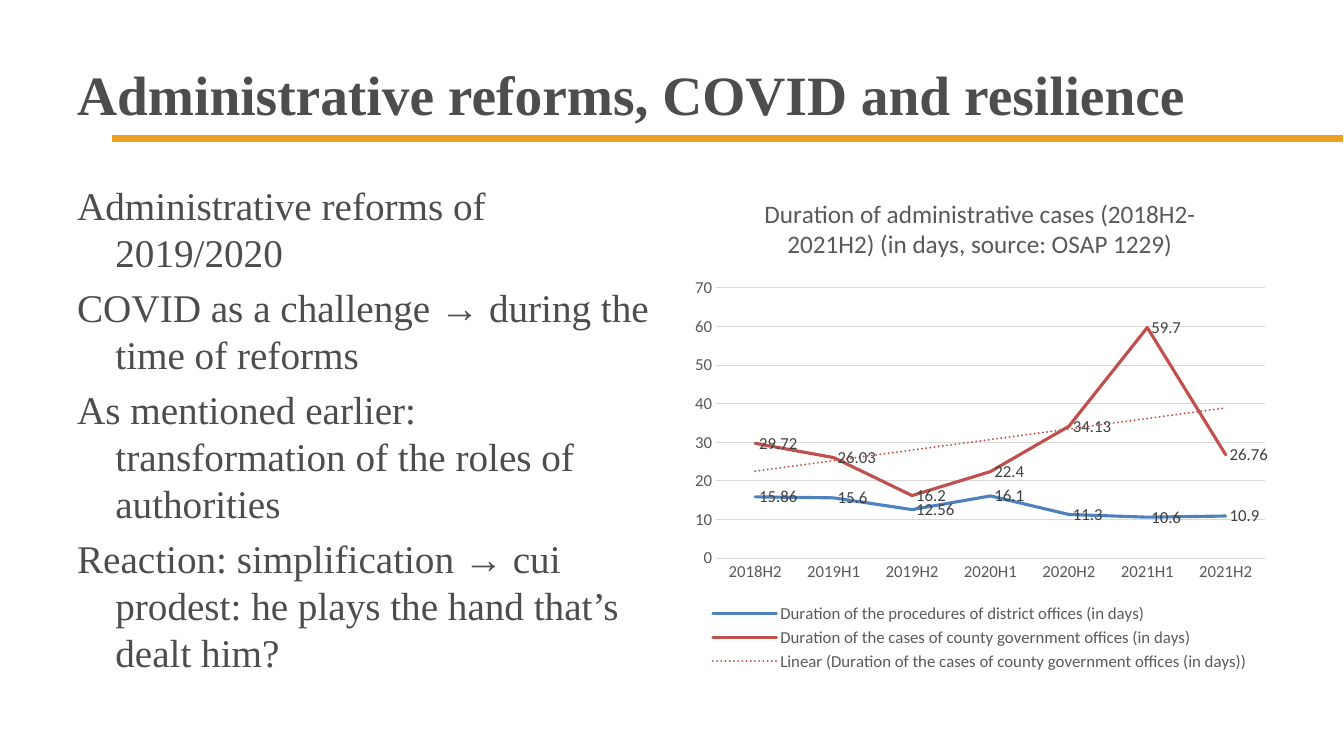
from dataclasses import dataclass

from lxml import etree
from pptx import Presentation
from pptx import util as u
from pptx.chart.data import CategoryChartData
from pptx.dml.color import RGBColor
from pptx.enum import chart as ch
from pptx.enum import shapes, text
from pptx.oxml import parse_xml
from pptx.oxml.ns import nsdecls, qn

SLIDE_WIDTH, SLIDE_HEIGHT = u.Inches(13.333), u.Inches(7.5)


@dataclass(frozen=True)
class Theme:
    serif: str = "Times New Roman"
    sans: str = "Calibri"
    ink: str = "4D4D4D"
    rule: str = "EDA021"
    paper: str = "FFFFFF"
    axis_text: str = "595959"
    label_text: str = "404040"
    grid: str = "D9D9D9"
    title_size: float = 39.6
    body_size: float = 28
    chart_title_size: float = 18
    chart_size: float = 12


@dataclass(frozen=True)
class Area:
    """A rectangle in percent of the slide's width and height."""
    left: float
    top: float
    width: float
    height: float

    def emu(self) -> tuple[int, int, int, int]:
        return (int(SLIDE_WIDTH * self.left / 100), int(SLIDE_HEIGHT * self.top / 100),
                int(SLIDE_WIDTH * self.width / 100), int(SLIDE_HEIGHT * self.height / 100))


@dataclass(frozen=True)
class Series:
    name: str
    color: str
    values: tuple[float, ...]
    trend: bool = False


THEME = Theme()
RULE = Area(8.33, 17.8, 91.67, 1)
TITLE = Area(5, 4, 90, 16.67)
BODY = Area(5, 23.33, 44.17, 66)
CHART = Area(50.83, 23.33, 44.17, 66)

HEADING = "Administrative reforms, COVID and resilience"
POINTS = (
    "Administrative reforms of 2019/2020",
    "COVID as a challenge → during the time of reforms",
    "As mentioned earlier: transformation of the roles of authorities",
    "Reaction: simplification → cui prodest: he plays the hand that’s dealt him?",
)
CHART_TITLE = "Duration of administrative cases (2018H2-2021H2) (in days, source: OSAP 1229)"
HALF_YEARS = ("2018H2", "2019H1", "2019H2", "2020H1", "2020H2", "2021H1", "2021H2")
SERIES = (
    Series("Duration of the procedures of district offices (in days)", "4F81BD",
           (15.86, 15.6, 12.56, 16.1, 11.3, 10.6, 10.9)),
    Series("Duration of the cases of county government offices (in days)", "C0504D",
           (29.72, 26.03, 16.2, 22.4, 34.13, 59.7, 26.76), trend=True),
)


def style_font(font, name: str, size: float, color: str, bold: bool = False) -> None:
    font.name, font.size, font.bold = name, u.Pt(size), bold
    font.color.rgb = RGBColor.from_string(color)


def style_line(line, color: str, width: float) -> None:
    line.color.rgb = RGBColor.from_string(color)
    line.width = u.Pt(width)


def add_rule(page) -> None:
    bar = page.shapes.add_shape(shapes.MSO_SHAPE.RECTANGLE, *RULE.emu())
    bar.shadow.inherit = False
    bar.fill.solid()
    bar.fill.fore_color.rgb = RGBColor.from_string(THEME.rule)
    style_line(bar.line, THEME.paper, 0.75)


def add_text(page, area: Area, lines: tuple[str, ...], size: float,
             bold: bool = False, hanging: float = 0,
             anchor: text.MSO_ANCHOR = text.MSO_ANCHOR.TOP) -> None:
    """Add one paragraph per line, with a hanging indent in inches."""
    frame = page.shapes.add_textbox(*area.emu()).text_frame
    frame.word_wrap = True
    frame.vertical_anchor = anchor
    frame.text = "\n".join(lines)
    for index, para in enumerate(frame.paragraphs):
        if hanging:
            properties = para._p.get_or_add_pPr()
            properties.set("marL", str(u.Inches(hanging)))
            properties.set("indent", str(-u.Inches(hanging)))
        if index:
            para.space_before = u.Pt(size * 0.2)
        for span in para.runs:
            style_font(span.font, THEME.serif, size, THEME.ink, bold)


def add_trend(series, color: str) -> None:
    """Insert a dotted linear trend line ahead of the categories."""
    trend = parse_xml(
        f'<c:trendline {nsdecls("c", "a")}><c:spPr><a:ln w="{u.Pt(1.5)}" cap="rnd">'
        f'<a:solidFill><a:srgbClr val="{color}"/></a:solidFill>'
        '<a:prstDash val="sysDot"/></a:ln></c:spPr><c:trendlineType val="linear"/>'
        '<c:dispRSqr val="0"/><c:dispEq val="0"/></c:trendline>')
    series._element.find(qn("c:cat")).addprevious(trend)


def style_axes(chart) -> None:
    for axis in (chart.category_axis, chart.value_axis):
        axis.major_tick_mark = axis.minor_tick_mark = ch.XL_TICK_MARK.NONE
        style_font(axis.tick_labels.font, THEME.sans, THEME.chart_size, THEME.axis_text)
    style_line(chart.category_axis.format.line, THEME.grid, 0.75)
    chart.value_axis.format.line.fill.background()
    style_line(chart.value_axis.major_gridlines.format.line, THEME.grid, 0.75)


def style_series(series, row: Series) -> None:
    series.smooth = False
    series.marker.style = ch.XL_MARKER_STYLE.NONE
    style_line(series.format.line, row.color, 2.25)
    etree.SubElement(series.format.line._ln, qn("a:round"))
    series.format.line._ln.set("cap", "rnd")
    labels = series.data_labels
    labels.show_value = True
    labels.position = ch.XL_LABEL_POSITION.RIGHT
    style_font(labels.font, THEME.sans, THEME.chart_size, THEME.label_text)
    if row.trend:
        add_trend(series, row.color)


def add_duration_chart(page) -> None:
    data = CategoryChartData()
    data.categories = HALF_YEARS
    for row in SERIES:
        data.add_series(row.name, row.values)
    chart = page.shapes.add_chart(ch.XL_CHART_TYPE.LINE, *CHART.emu(), data).chart
    style_font(chart.font, THEME.sans, THEME.chart_size, THEME.axis_text)

    chart.has_title = True
    chart.chart_title.include_in_layout = False
    chart.chart_title.text_frame.text = CHART_TITLE
    for span in chart.chart_title.text_frame.paragraphs[0].runs:
        style_font(span.font, THEME.sans, THEME.chart_title_size, THEME.axis_text)

    chart.has_legend = True
    chart.legend.position = ch.XL_LEGEND_POSITION.BOTTOM
    chart.legend.include_in_layout = False
    style_font(chart.legend.font, THEME.sans, THEME.chart_size, THEME.axis_text)

    style_axes(chart)
    chart.plots[0].vary_by_categories = False
    for series, row in zip(chart.plots[0].series, SERIES):
        style_series(series, row)


def main() -> None:
    deck = Presentation()
    deck.slide_width, deck.slide_height = SLIDE_WIDTH, SLIDE_HEIGHT
    page = deck.slides.add_slide(deck.slide_layouts[6])
    add_rule(page)
    add_text(page, TITLE, (HEADING,), THEME.title_size, bold=True,
             anchor=text.MSO_ANCHOR.MIDDLE)
    add_text(page, BODY, POINTS, THEME.body_size, hanging=0.38)
    add_duration_chart(page)
    deck.save("out.pptx")


if __name__ == "__main__":
    main()
